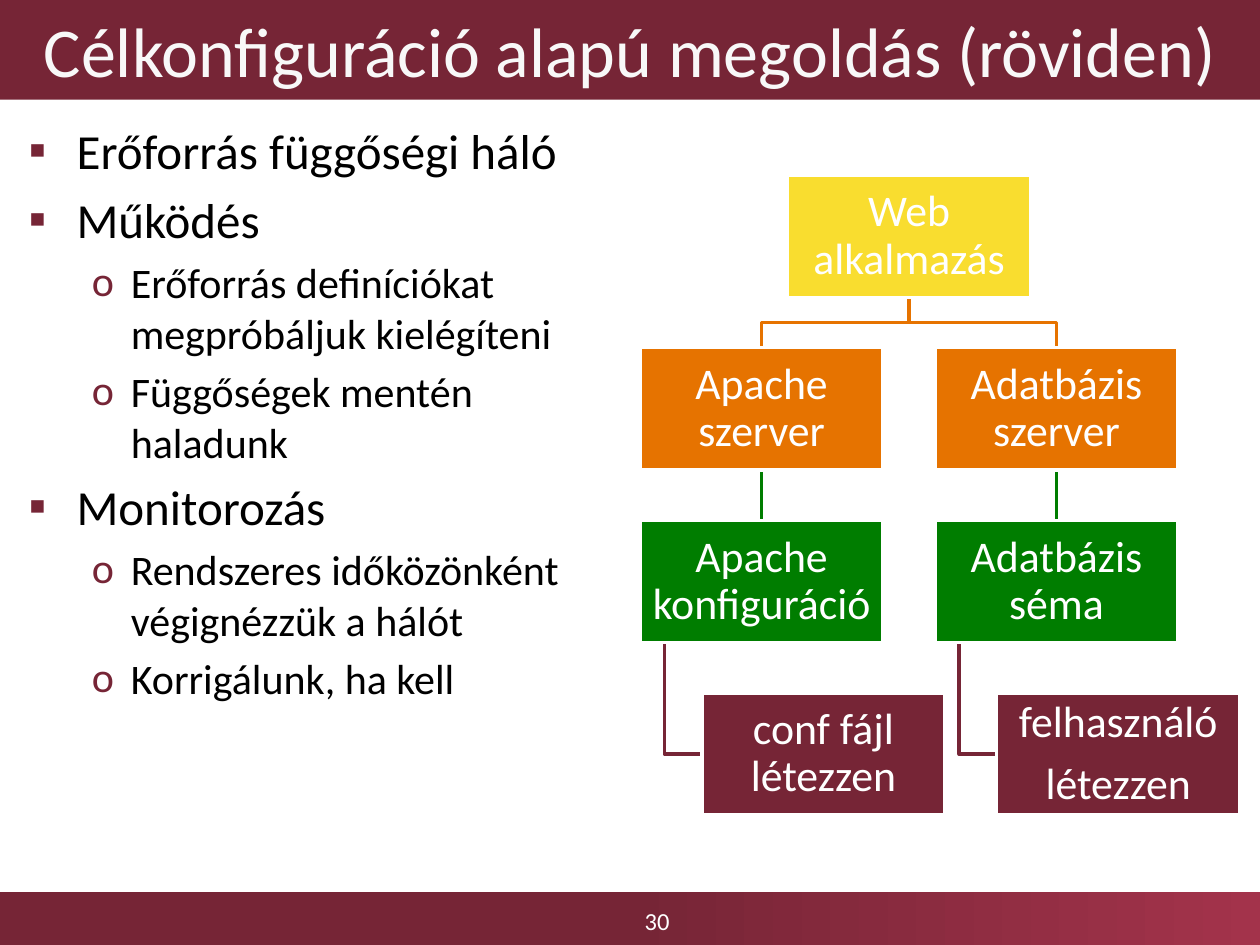
"""Build the slide on target-configuration based resource management."""
from lxml.etree import SubElement
from pptx import Presentation
from pptx.dml.color import RGBColor
from pptx.enum.shapes import MSO_CONNECTOR, MSO_SHAPE
from pptx.enum.text import MSO_ANCHOR, MSO_AUTO_SIZE, PP_ALIGN
from pptx.oxml.ns import qn
from pptx.util import Inches, Pt

BURGUNDY = RGBColor(0x76, 0x25, 0x36)
ROSE = RGBColor(0xA3, 0x33, 0x4B)
YELLOW = RGBColor(0xF9, 0xDD, 0x2F)
ORANGE = RGBColor(0xE6, 0x73, 0x00)
GREEN = RGBColor(0x00, 0x7D, 0x00)
WHITE = RGBColor(0xFF, 0xFF, 0xFF)
OFF_WHITE = RGBColor(0xF8, 0xF8, 0xF8)
BLACK = RGBColor(0x00, 0x00, 0x00)


def write(paragraph, text, size, color, align=PP_ALIGN.CENTER, before=0, after=0,
          spacing=None, bullet=None, left=0, hanging=0):
    props = paragraph._p.get_or_add_pPr()
    if bullet:
        props.set("marL", str(Inches(left)))
        props.set("indent", str(-Inches(hanging)))
        tint = SubElement(SubElement(props, qn("a:buClr")), qn("a:srgbClr"))
        tint.set("val", str(BURGUNDY))
        SubElement(props, qn("a:buFont")).set("typeface", "Calibri")
        SubElement(props, qn("a:buChar")).set("char", bullet)
    paragraph.alignment = align
    paragraph.space_before, paragraph.space_after = Pt(before), Pt(after)
    if spacing:
        paragraph.line_spacing = spacing
    run = paragraph.add_run()
    run.text = text
    run.font.name, run.font.size, run.font.color.rgb = "Calibri", Pt(size), color


prs = Presentation()
prs.slide_width, prs.slide_height = Inches(10), Inches(7.5)
slide = prs.slides.add_slide(prs.slide_layouts[5])
shapes = slide.shapes

footer = shapes.add_shape(MSO_SHAPE.RECTANGLE, 0, Inches(7.08), Inches(10), Inches(0.42))
footer.shadow.inherit = False
footer.line.fill.background()
footer.fill.gradient()
footer.fill.gradient_angle = 0
for stop, position, color in zip(footer.fill.gradient_stops, (0.5, 1), (BURGUNDY, ROSE)):
    stop.position, stop.color.rgb = position, color

page_number = shapes.add_textbox(Inches(3.59), Inches(7.11), Inches(3.25), Inches(0.39))
page_number.text_frame.word_wrap = True
page_number.text_frame.vertical_anchor = MSO_ANCHOR.MIDDLE
write(page_number.text_frame.paragraphs[0], "30", 14, WHITE)

title = shapes.title
title.left, title.top, title.width, title.height = 0, 0, Inches(10), Inches(0.79)
title.fill.solid()
title.fill.fore_color.rgb = BURGUNDY
title.text_frame.auto_size = MSO_AUTO_SIZE.NONE
title.text_frame.vertical_anchor = MSO_ANCHOR.MIDDLE
write(title.text_frame.paragraphs[0], "Célkonfiguráció alapú megoldás (röviden)", 40, OFF_WHITE)

OUTLINE = [
    (0, "Erőforrás függőségi háló"),
    (0, "Működés"),
    (1, "Erőforrás definíciókat megpróbáljuk kielégíteni"),
    (1, "Függőségek mentén haladunk"),
    (0, "Monitorozás"),
    (1, "Rendszeres időközönként végignézzük a hálót"),
    (1, "Korrigálunk, ha kell"),
]
LEVELS = [
    {"size": 28, "bullet": "▪", "left": 0.38, "hanging": 0.38},
    {"size": 24, "bullet": "o", "left": 0.81, "hanging": 0.31},
]
outline = shapes.add_textbox(Inches(0.13), Inches(0.91), Inches(4.79), Inches(6.03)).text_frame
outline.word_wrap = True
for index, (level, text) in enumerate(OUTLINE):
    paragraph = outline.add_paragraph() if index else outline.paragraphs[0]
    paragraph.level = level
    look = LEVELS[level]
    write(paragraph, text, color=BLACK, align=PP_ALIGN.LEFT,
          before=0.2 * look["size"] if index else 0, **look)

BOX_W, BOX_H = 1.93, 0.97
LEFT_COL, RIGHT_COL = 5.08, 7.42
ROOT_COL = (LEFT_COL + RIGHT_COL) / 2
CHILD_SHIFT = 0.49
ROWS = [1.39 + 1.37 * row for row in range(4)]
NODES = {
    "web": (ROOT_COL, 0, YELLOW, ["Web alkalmazás"]),
    "apache": (LEFT_COL, 1, ORANGE, ["Apache szerver"]),
    "config": (LEFT_COL, 2, GREEN, ["Apache konfiguráció"]),
    "file": (LEFT_COL + CHILD_SHIFT, 3, BURGUNDY, ["conf fájl létezzen"]),
    "database": (RIGHT_COL, 1, ORANGE, ["Adatbázis szerver"]),
    "schema": (RIGHT_COL, 2, GREEN, ["Adatbázis séma"]),
    "user": (RIGHT_COL + CHILD_SHIFT, 3, BURGUNDY, ["felhasználó", "létezzen"]),
}
boxes = {}
for name, (left, row, color, lines) in NODES.items():
    box = shapes.add_shape(MSO_SHAPE.RECTANGLE, Inches(left), Inches(ROWS[row]),
                           Inches(BOX_W), Inches(BOX_H))
    box.shadow.inherit = False
    box.fill.solid()
    box.fill.fore_color.rgb = color
    box.line.color.rgb, box.line.width = WHITE, Pt(2)
    frame = box.text_frame
    frame.word_wrap = True
    frame.vertical_anchor = MSO_ANCHOR.MIDDLE
    frame.margin_left = frame.margin_right = frame.margin_top = frame.margin_bottom = Inches(0.02)
    for index, text in enumerate(lines):
        paragraph = frame.add_paragraph() if index else frame.paragraphs[0]
        write(paragraph, text, 25, WHITE, after=8.75, spacing=0.9)
    boxes[name] = box

links = []
for parent, child in [("apache", "config"), ("database", "schema")]:
    link = shapes.add_connector(MSO_CONNECTOR.STRAIGHT, 0, 0, 0, 0)
    link.begin_connect(boxes[parent], 2)
    link.end_connect(boxes[child], 0)
    SubElement(link.element.spPr, qn("a:effectLst"))
    links.append((link, GREEN))

elbows = []
for column in (LEFT_COL, RIGHT_COL):
    root_x, server_x = ROOT_COL + BOX_W / 2, column + BOX_W / 2
    root_y, server_y = ROWS[0] + BOX_H, ROWS[1]
    bend_y = (root_y + server_y) / 2
    elbows.append((ORANGE, [(root_x, root_y), (root_x, bend_y),
                            (server_x, bend_y), (server_x, server_y)]))
    stem_x, child_y = column + BOX_W / 10, ROWS[3] + BOX_H / 2
    elbows.append((BURGUNDY, [(stem_x, ROWS[2] + BOX_H), (stem_x, child_y),
                              (column + CHILD_SHIFT, child_y)]))
for color, points in elbows:
    start, *rest = [(Inches(x), Inches(y)) for x, y in points]
    builder = shapes.build_freeform(*start)
    builder.add_line_segments(rest, close=False)
    elbow = builder.convert_to_shape()
    elbow.shadow.inherit = False
    elbow.fill.background()
    links.append((elbow, color))

for link, color in links:
    link.line.color.rgb, link.line.width = color, Pt(2)
    boxes["web"].element.addprevious(link.element)

prs.save("out.pptx")
